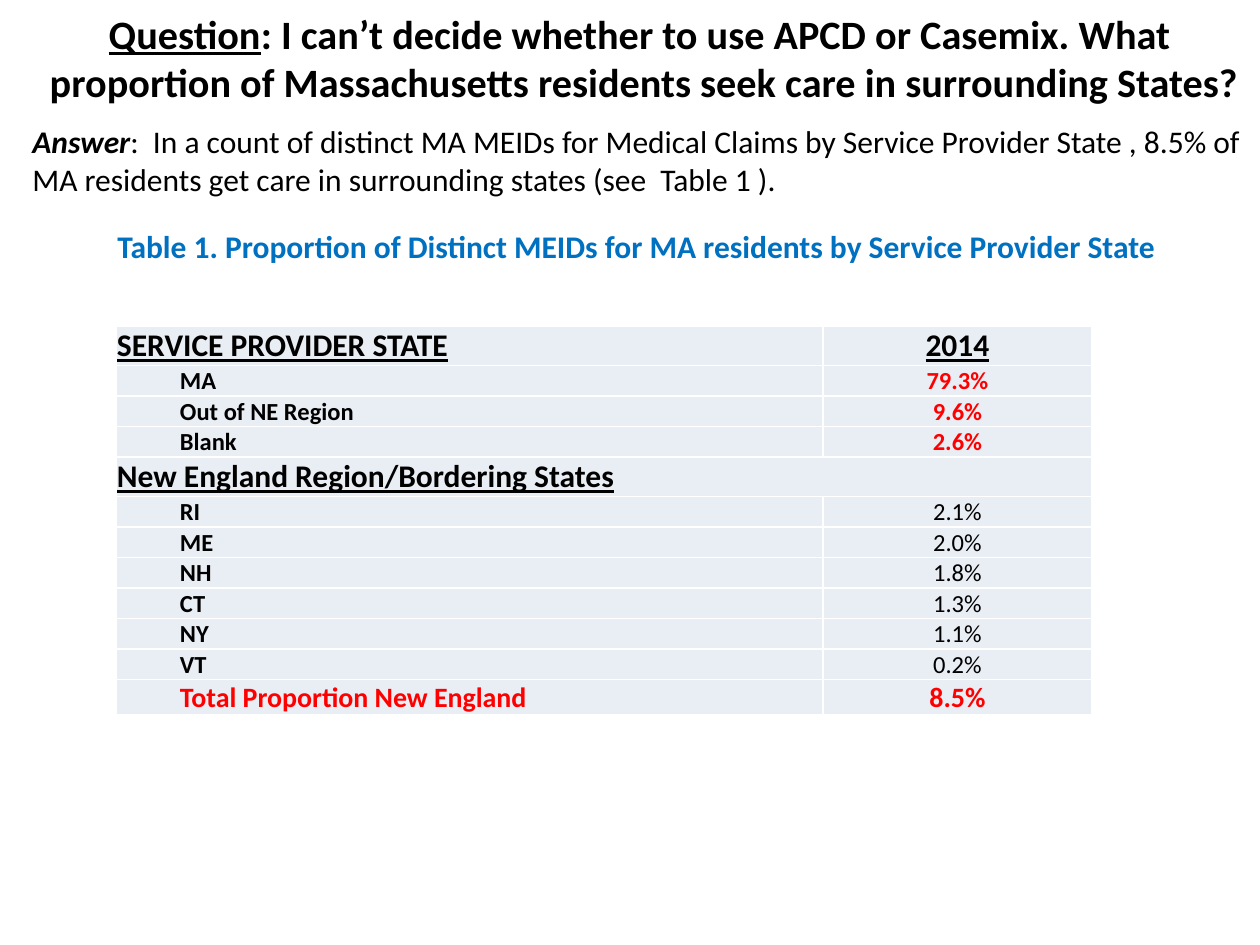
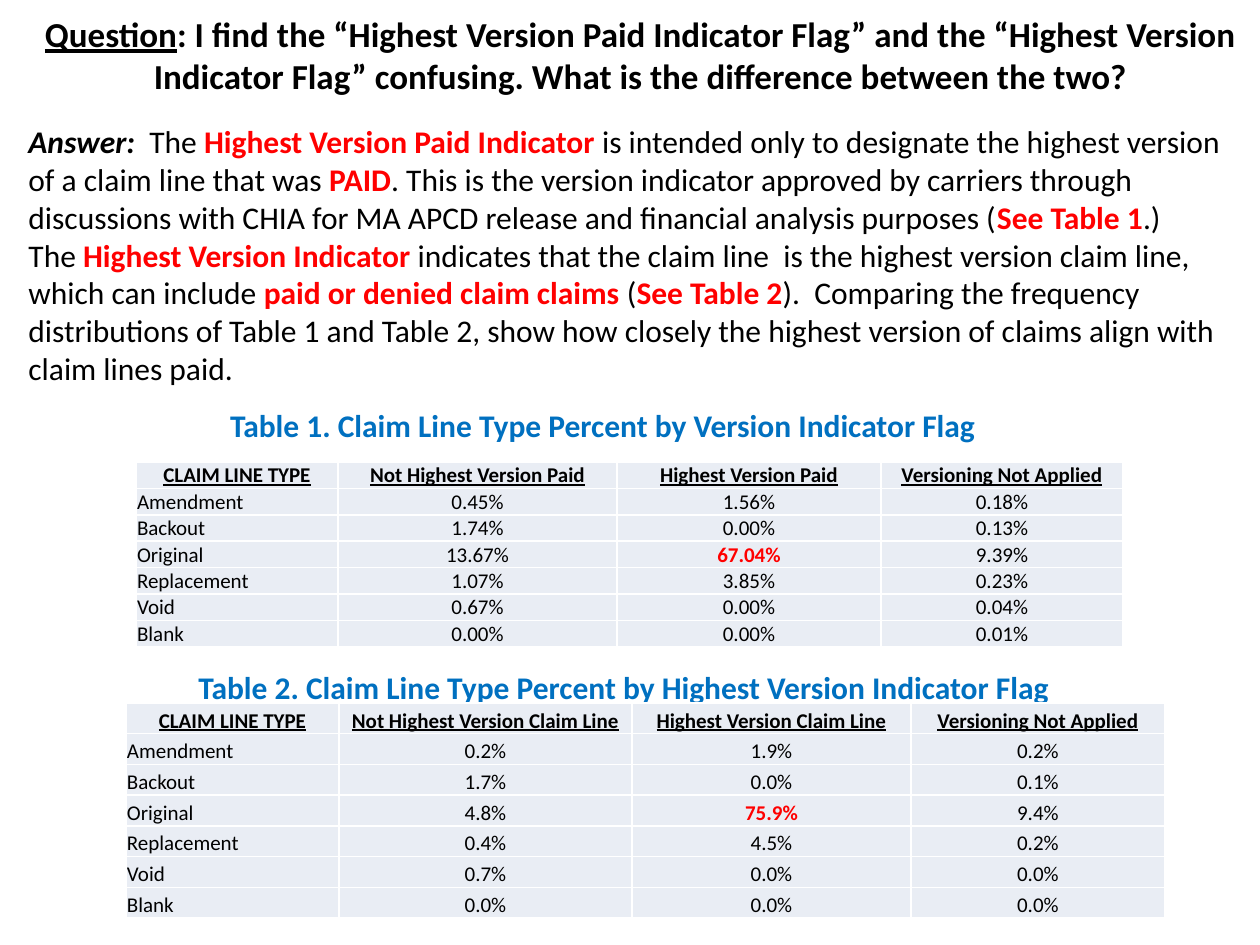
from dataclasses import dataclass, replace

from lxml import etree
from pptx import Presentation
from pptx.dml.color import RGBColor
from pptx.enum.text import MSO_ANCHOR, PP_ALIGN
from pptx.oxml.ns import qn
from pptx.util import Emu, Pt

PX = 914400 / 126
LEFT, CENTER = PP_ALIGN.LEFT, PP_ALIGN.CENTER
TOP, MIDDLE, BOTTOM = MSO_ANCHOR.TOP, MSO_ANCHOR.MIDDLE, MSO_ANCHOR.BOTTOM

BLACK = RGBColor(0x00, 0x00, 0x00)
RED = RGBColor(0xFF, 0x00, 0x00)
BLUE = RGBColor(0x00, 0x70, 0xC0)
WHITE = RGBColor(0xFF, 0xFF, 0xFF)
CELL_FILL = RGBColor(0xE9, 0xED, 0xF4)
FONT = "Calibri"
LABEL_INDENT = 63


@dataclass(frozen=True)
class Style:
    size: int
    color: RGBColor = BLACK
    bold: bool = False
    italic: bool = False
    underline: bool = False


# Shared text styles
BODY = Style(18)
KEY = Style(18, RED, bold=True)
LEAD = Style(18, bold=True, italic=True)
CAPTION = Style(18, BLUE, bold=True)
SECTION = Style(18, bold=True, underline=True)
STATE = Style(14, bold=True)
SHARE = Style(14)
STATE_KEY = Style(14, RED, bold=True)
TOTAL = Style(16, RED, bold=True)
CLAIM = Style(12)
CLAIM_HEAD = Style(12, bold=True, underline=True)
CLAIM_KEY = Style(12, RED, bold=True)

# Table contents
STATE_ROWS = [
    ("SERVICE PROVIDER STATE", "2014", SECTION, SECTION),
    ("MA", "79.3%", STATE, STATE_KEY),
    ("Out of NE Region", "9.6%", STATE, STATE_KEY),
    ("Blank", "2.6%", STATE, STATE_KEY),
    ("New England Region/Bordering States", None, SECTION, SECTION),
    ("RI", "2.1%", STATE, SHARE),
    ("ME", "2.0%", STATE, SHARE),
    ("NH", "1.8%", STATE, SHARE),
    ("CT", "1.3%", STATE, SHARE),
    ("NY", "1.1%", STATE, SHARE),
    ("VT", "0.2%", STATE, SHARE),
    ("Total Proportion New England", "8.5%", TOTAL, TOTAL),
]
PAID_ROWS = [
    ("CLAIM LINE TYPE", "Not Highest Version Paid", "Highest Version Paid",
     "Versioning Not Applied"),
    ("Amendment", "0.45%", "1.56%", "0.18%"),
    ("Backout", "1.74%", "0.00%", "0.13%"),
    ("Original", "13.67%", "67.04%", "9.39%"),
    ("Replacement", "1.07%", "3.85%", "0.23%"),
    ("Void", "0.67%", "0.00%", "0.04%"),
    ("Blank", "0.00%", "0.00%", "0.01%"),
]
HIGHEST_ROWS = [
    ("CLAIM LINE TYPE", "Not Highest Version Claim Line",
     "Highest Version Claim Line", "Versioning Not Applied"),
    ("Amendment", "0.2%", "1.9%", "0.2%"),
    ("Backout", "1.7%", "0.0%", "0.1%"),
    ("Original", "4.8%", "75.9%", "9.4%"),
    ("Replacement", "0.4%", "4.5%", "0.2%"),
    ("Void", "0.7%", "0.0%", "0.0%"),
    ("Blank", "0.0%", "0.0%", "0.0%"),
]


def emu(px):
    return Emu(round(px * PX))


def format_span(span, style):
    font = span.font
    font.name, font.size = FONT, Pt(style.size)
    font.bold, font.italic, font.underline = style.bold, style.italic, style.underline
    font.color.rgb = style.color


def add_text(page, box, paragraphs, align=LEFT, anchor=TOP):
    """Place paragraphs, each a list of (text, style) spans, in a box."""
    frame = page.shapes.add_textbox(*map(emu, box)).text_frame
    frame.word_wrap = True
    frame.vertical_anchor = anchor
    for index, spans in enumerate(paragraphs):
        para = frame.paragraphs[0] if index == 0 else frame.add_paragraph()
        para.alignment = align
        for text, style in spans:
            for number, line in enumerate(text.split("\n")):
                if number:
                    para.add_line_break()
                span = para.add_run()
                span.text = line
                format_span(span, style)


def add_question(page, box, text, size):
    style = Style(size, bold=True)
    spans = [("Question", replace(style, underline=True)), (": " + text, style)]
    add_text(page, box, [spans], CENTER, MIDDLE)


def add_caption(page, box, text, align=CENTER):
    add_text(page, box, [[(text, CAPTION)]], align)


def add_borders(cell):
    properties = cell._tc.get_or_add_tcPr()
    for side in ("a:lnL", "a:lnR", "a:lnT", "a:lnB"):
        line = etree.SubElement(properties, qn(side), w=str(Pt(1)))
        fill = etree.SubElement(line, qn("a:solidFill"))
        etree.SubElement(fill, qn("a:srgbClr"), val=str(WHITE))


def fill_cell(cell, text, style, align, indent=0):
    cell.margin_left = cell.margin_right = cell.margin_top = emu(1)
    cell.margin_bottom = 0
    cell.vertical_anchor = BOTTOM
    add_borders(cell)
    cell.fill.solid()
    cell.fill.fore_color.rgb = CELL_FILL
    if text:
        para = cell.text_frame.paragraphs[0]
        para.text = text
        para.alignment = align
        if indent:
            para._p.get_or_add_pPr().set("marL", str(emu(indent)))
        format_span(para.runs[0], style)


def add_grid(page, left, top, height, widths, weights):
    """Add a plain table whose row heights share the height by weight."""
    table = page.shapes.add_table(
        len(weights), len(widths), emu(left), emu(top),
        emu(sum(widths)), emu(height)).table
    table.first_row = table.horz_banding = False
    for column, width in zip(table.columns, widths):
        column.width = emu(width)
    for row, weight in zip(table.rows, weights):
        row.height = emu(height * weight / sum(weights))
    return table


def add_state_table(page, left, top, height, widths):
    sizes = [label_style.size for _, _, label_style, _ in STATE_ROWS]
    table = add_grid(page, left, top, height, widths, sizes)
    for row, (label, value, label_style, value_style) in enumerate(STATE_ROWS):
        indent = 0 if label_style == SECTION else LABEL_INDENT
        fill_cell(table.cell(row, 0), label, label_style, LEFT, indent)
        fill_cell(table.cell(row, 1), value, value_style, CENTER)
        if value is None:
            table.cell(row, 0).merge(table.cell(row, 1))


def add_claim_table(page, left, top, height, widths, rows):
    table = add_grid(page, left, top, height, widths, [1] * len(rows))
    for row, texts in enumerate(rows):
        for column, text in enumerate(texts):
            style = CLAIM_HEAD if row == 0 else CLAIM
            if (texts[0], column) == ("Original", 2):
                style = CLAIM_KEY
            align = LEFT if row and column == 0 else CENTER
            fill_cell(table.cell(row, column), text, style, align)


def build_states_page(page):
    add_question(
        page, (-4, -21, 1289, 157),
        "I can’t decide whether to use APCD or Casemix. What\n proportion of "
        "Massachusetts residents seek care in surrounding States?", 23)
    add_caption(
        page, (105, 221, 1072, 50),
        "Table 1. Proportion of Distinct MEIDs for MA residents by Service "
        "Provider State", LEFT)
    add_state_table(page, 116, 326, 389, (707, 269))
    add_text(page, (20, 116, 1239, 89), [[
        ("Answer", LEAD),
        (":  In a count of distinct MA MEIDs for Medical Claims by Service "
         "Provider State , 8.5% of MA residents get care in surrounding states "
         "(see  Table 1 ).", BODY),
    ]])


def build_versions_page(page):
    add_question(
        page, (21, 4, 1239, 101),
        "I find the “Highest Version Paid Indicator Flag” and the “Highest "
        "Version Indicator Flag” confusing. What is the difference between "
        "the two?", 20)
    add_text(page, (16, 116, 1239, 280), [
        [
            ("Answer:  ", LEAD),
            ("The ", BODY),
            ("Highest Version Paid Indicator ", KEY),
            ("is intended only to designate the highest version of a claim "
             "line that was ", BODY),
            ("PAID", KEY),
            (". This is the version indicator approved by carriers through "
             "discussions with CHIA for MA APCD release and financial analysis "
             "purposes (", BODY),
            ("See Table 1", KEY),
            (".)", BODY),
        ],
        [
            ("The ", BODY),
            ("Highest Version Indicator ", KEY),
            ("indicates that the claim line  is the highest version claim "
             "line, which can include ", BODY),
            ("paid or denied claim claims ", KEY),
            ("(", BODY),
            ("See Table 2", KEY),
            (").  Comparing the frequency distributions of Table 1 and Table 2, "
             "show how closely the highest version of claims align with claim "
             "lines paid.", BODY),
        ],
    ])
    # Paid version table
    add_caption(page, (41, 400, 1124, 50),
                "Table 1. Claim Line Type Percent by Version Indicator Flag")
    add_claim_table(page, 136, 462, 185, (202, 279, 264, 242), PAID_ROWS)
    # Highest version table
    add_caption(page, (62, 662, 1124, 50),
                "Table 2. Claim Line Type Percent by Highest Version Indicator Flag")
    add_claim_table(page, 126, 703, 215, (213, 293, 279, 254), HIGHEST_ROWS)


def main():
    deck = Presentation()
    deck.slide_width, deck.slide_height = emu(1260), emu(945)
    blank = deck.slide_layouts[6]
    for build in (build_states_page, build_versions_page):
        build(deck.slides.add_slide(blank))
    deck.save("out.pptx")


if __name__ == "__main__":
    main()
